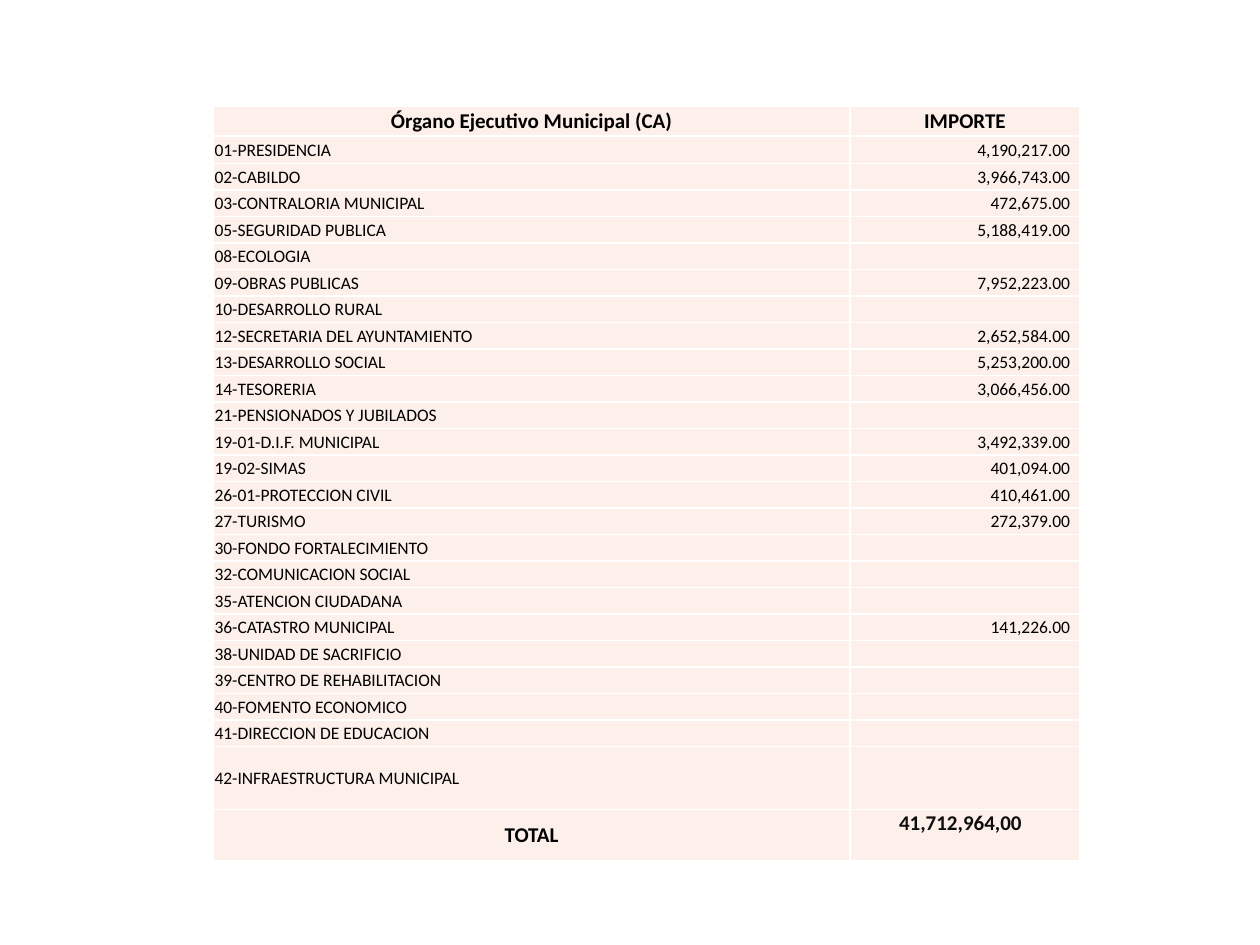
from lxml import etree
from pptx import Presentation
from pptx.dml.color import RGBColor
from pptx.enum import text
from pptx.oxml import ns
from pptx.util import Pt

COLORS = {"fill": "FDEFE9", "edge": "FFFFFF", "ink": "000000", "sum": "0D0D0D"}
LEFT, MID, RIGHT = text.PP_ALIGN.LEFT, text.PP_ALIGN.CENTER, text.PP_ALIGN.RIGHT

HEAD = ("Órgano Ejecutivo Municipal (CA)", "IMPORTE")
AREAS = [
    ("01-PRESIDENCIA", "4,190,217.00"),
    ("02-CABILDO", "3,966,743.00"),
    ("03-CONTRALORIA MUNICIPAL", "472,675.00"),
    ("05-SEGURIDAD PUBLICA", "5,188,419.00"),
    ("08-ECOLOGIA", ""),
    ("09-OBRAS PUBLICAS", "7,952,223.00"),
    ("10-DESARROLLO RURAL", ""),
    ("12-SECRETARIA DEL AYUNTAMIENTO", "2,652,584.00"),
    ("13-DESARROLLO SOCIAL", "5,253,200.00"),
    ("14-TESORERIA", "3,066,456.00"),
    ("21-PENSIONADOS Y JUBILADOS", ""),
    ("19-01-D.I.F. MUNICIPAL", "3,492,339.00"),
    ("19-02-SIMAS", "401,094.00"),
    ("26-01-PROTECCION CIVIL", "410,461.00"),
    ("27-TURISMO", "272,379.00"),
    ("30-FONDO FORTALECIMIENTO", ""),
    ("32-COMUNICACION SOCIAL", ""),
    ("35-ATENCION CIUDADANA", ""),
    ("36-CATASTRO MUNICIPAL", "141,226.00"),
    ("38-UNIDAD DE SACRIFICIO", ""),
    ("39-CENTRO DE REHABILITACION", ""),
    ("40-FOMENTO ECONOMICO", ""),
    ("41-DIRECCION DE EDUCACION", ""),
    ("42-INFRAESTRUCTURA MUNICIPAL", ""),
]
TOTAL = ("TOTAL", "41,712,964,00")


class Deck:
    """Holds the text style and the current slide."""

    font = "Calibri"

    def __init__(self, wide, high):
        self.prs = Presentation()
        self.prs.slide_width, self.prs.slide_height = Pt(wide), Pt(high)
        self.slide = self.prs.slides.add_slide(self.prs.slide_layouts[6])

    def table(self, left, top, widths, heights):
        frame = self.slide.shapes.add_table(
            len(heights), len(widths), Pt(left), Pt(top),
            Pt(sum(widths)), Pt(sum(heights)))
        grid = frame.table
        grid.first_row = grid.horz_banding = False
        for col, width in zip(grid.columns, widths):
            col.width = Pt(width)
        for row, height in zip(grid.rows, heights):
            row.height = Pt(height)
        return grid

    def cell(self, cell, words, align, size=10, bold=False, color="ink",
             right=0.6, anchor=text.MSO_ANCHOR.MIDDLE):
        look = {"margin_left": Pt(0.6), "margin_top": Pt(0.6),
                "margin_right": Pt(right), "margin_bottom": 0,
                "vertical_anchor": anchor}
        for key, value in look.items():
            setattr(cell, key, value)
        self.edges(cell)
        cell.fill.solid()
        cell.fill.fore_color.rgb = RGBColor.from_string(COLORS["fill"])
        para = cell.text_frame.paragraphs[0]
        para.alignment = align
        if not words:
            # An empty cell still needs a small size to keep its row low
            end = etree.SubElement(para._p, ns.qn("a:endParaRPr"))
            end.set("sz", str(size * 100))
            return
        run = para.add_run()
        run.text = words
        for key, value in {"name": self.font, "size": Pt(size), "bold": bold}.items():
            setattr(run.font, key, value)
        run.font.color.rgb = RGBColor.from_string(COLORS[color])

    def edges(self, cell):
        props = cell._tc.get_or_add_tcPr()
        for side in ("lnL", "lnR", "lnT", "lnB"):
            line = etree.SubElement(props, ns.qn("a:" + side), w=str(Pt(1)))
            fill = etree.SubElement(line, ns.qn("a:solidFill"))
            etree.SubElement(fill, ns.qn("a:srgbClr"), val=COLORS["edge"])


def main():
    deck = Deck(720, 540)

    # Grid: header, first area, even rows, tall last area, total
    heights = [17.3, 15.8] + [15.15] * (len(AREAS) - 2) + [36, 29.3]
    grid = deck.table(122, 60.5, [363.6, 131.6], heights)

    # Header
    for col, words in enumerate(HEAD):
        deck.cell(grid.cell(0, col), words, MID, size=12, bold=True)

    # Areas and amounts
    for row, (area, amount) in enumerate(AREAS, 1):
        deck.cell(grid.cell(row, 0), area, LEFT)
        deck.cell(grid.cell(row, 1), amount, RIGHT, right=5.8)

    # Total
    last = len(heights) - 1
    deck.cell(grid.cell(last, 0), TOTAL[0], MID, size=12, bold=True)
    deck.cell(grid.cell(last, 1), TOTAL[1], MID, size=12, bold=True, color="sum",
              right=5.8, anchor=text.MSO_ANCHOR.TOP)

    deck.prs.save("out.pptx")


if __name__ == "__main__":
    main()
